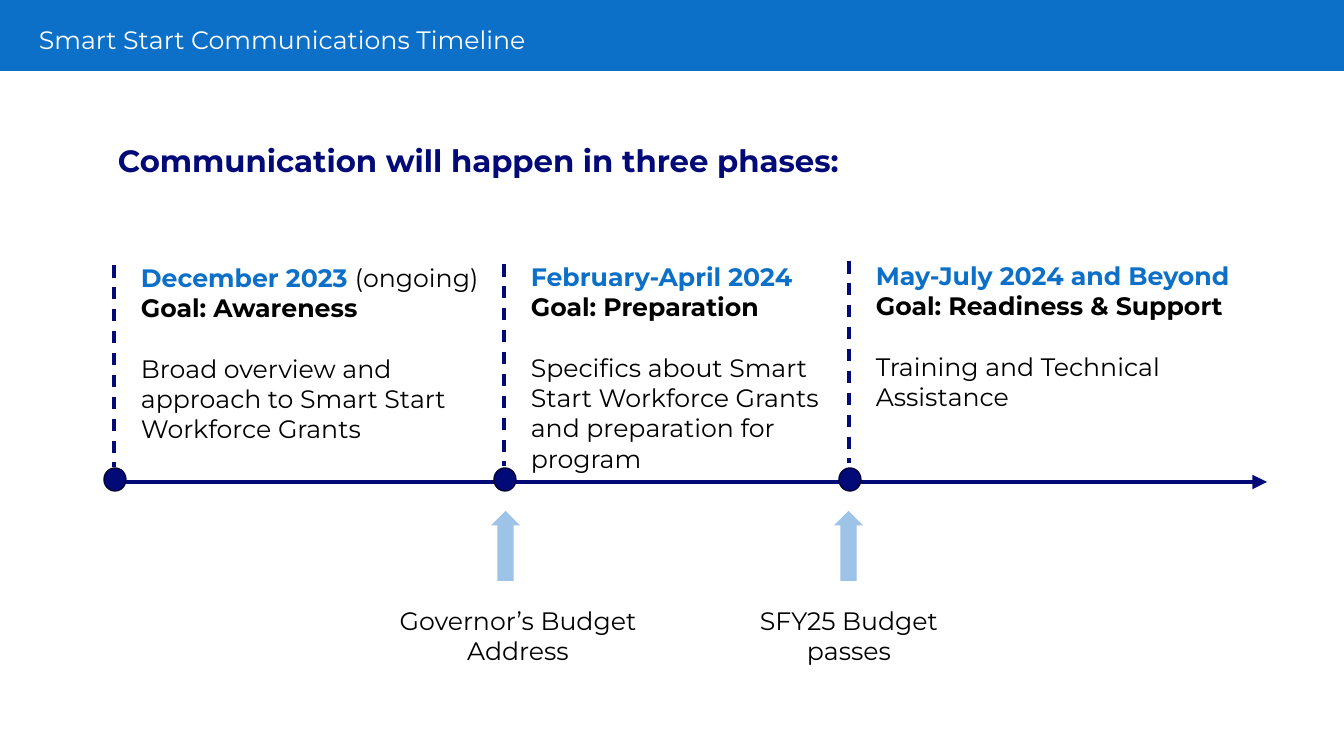
from pptx import Presentation
from pptx.dml.color import RGBColor
from pptx.enum.dml import MSO_LINE
from pptx.enum.shapes import MSO_CONNECTOR, MSO_SHAPE
from pptx.enum.text import MSO_ANCHOR, PP_ALIGN
from pptx.oxml.ns import qn
from pptx.util import Pt
from lxml import etree

RECTANGLE, OVAL, UP_ARROW = MSO_SHAPE.RECTANGLE, MSO_SHAPE.OVAL, MSO_SHAPE.UP_ARROW
STRAIGHT, DASH = MSO_CONNECTOR.STRAIGHT, MSO_LINE.DASH
MIDDLE, TOP = MSO_ANCHOR.MIDDLE, MSO_ANCHOR.TOP
LEFT, CENTER = PP_ALIGN.LEFT, PP_ALIGN.CENTER

FONT = "Montserrat"
COLORS = {
    "blue": "0C70C8",
    "navy": "020A78",
    "outline": "010435",
    "sky": "9DC3E6",
    "black": "000000",
    "white": "FFFFFF",
}
AXIS_Y = 482

PHASES = [
    ((114, 261, 377, 194), 4, "December 2023 ", "(ongoing)", "Goal: Awareness",
     "Broad overview and approach to Smart Start Workforce Grants"),
    ((504, 260, 356, 224), 4, "February-April 2024", "", "Goal: Preparation",
     "Specifics about Smart Start Workforce Grants and preparation for program"),
    ((849, 259, 401, 163), 2, "May-July 2024 and Beyond", "", "Goal: Readiness & Support",
     "Training and Technical Assistance"),
]
EVENTS = [
    ((367, 511, 302, 191), 505, ["Governor’s Budget Address"]),
    ((698, 511, 302, 161), 848, ["SFY25 Budget", "passes"]),
]


def px(length):
    return round(length * 914400 / 100.8)


def rgb(name):
    return RGBColor.from_string(COLORS[name])


def add_block(page, kind, box, fill, line=None):
    shape = page.shapes.add_shape(kind, *map(px, box))
    shape.shadow.inherit = False
    shape.fill.solid()
    shape.fill.fore_color.rgb = rgb(fill)
    if line:
        shape.line.color.rgb = rgb(line)
        shape.line.width = Pt(1)
    else:
        shape.line.fill.background()
    return shape


def add_line(page, start, end, width):
    line = page.shapes.add_connector(STRAIGHT, *map(px, start + end))
    line.line.color.rgb = rgb("navy")
    line.line.width = Pt(width)
    etree.SubElement(line._element.spPr, qn("a:effectLst"))
    return line


def add_text(page, box, paragraphs, size=18, align=LEFT, anchor=TOP, spacing=None):
    frame = page.shapes.add_textbox(*map(px, box)).text_frame
    frame.word_wrap = True
    frame.vertical_anchor = anchor
    for index, spans in enumerate(paragraphs):
        para = frame.add_paragraph() if index else frame.paragraphs[0]
        para.alignment = align
        if spacing:
            para.line_spacing = spacing
        for text, color, bold in spans:
            span = para.add_run()
            span.text = text
            span.font.name = FONT
            span.font.size = Pt(size)
            span.font.bold = bold
            span.font.color.rgb = rgb(color)
    return frame


def add_header(page, box):
    left, top, width, height = box
    add_block(page, RECTANGLE, box, "blue")
    add_text(page, (left + 29, top + 22, 761, 38),
             [[("Smart Start Communications Timeline", "white", False)]],
             anchor=MIDDLE, spacing=0.9)


def add_heading(page, box):
    add_text(page, box, [[("Communication will happen in three phases:", "navy", True)]],
             size=22, spacing=1.1)


def add_axis(page, box):
    left, top, width, _ = box
    axis = add_line(page, (left, top), (left + width, top), 3.5)
    etree.SubElement(axis.line._get_or_add_ln(), qn("a:tailEnd"), type="triangle")


def add_phase(page, box, dash_offset, date, note, goal, detail):
    left, top, width, height = box
    dash_top = top + dash_offset
    marker = add_line(page, (left, dash_top), (left, dash_top + 202), 2.25)
    marker.line.dash_style = DASH
    add_block(page, OVAL, (left - 10, AXIS_Y - 14, 22, 23), "navy", "outline")
    dates = [(date, "blue", True)]
    if note:
        dates.append((note, "black", False))
    frame = add_text(page, (left + 17, top - 4, width - 17, height),
                     [dates, [(goal, "black", True)], [(detail, "black", False)]])
    frame.paragraphs[-1].space_before = Pt(22)


def add_event(page, box, arrow_x, lines):
    left, top, width, height = box
    arrow = add_block(page, UP_ARROW, (arrow_x - 14, top, 29, 70), "sky")
    arrow.adjustments[0] = 0.56
    arrow.adjustments[1] = 0.5
    add_text(page, (left, top + 89, width, height - 89),
             [[(line, "black", False)] for line in lines], align=CENTER)


def main():
    deck = Presentation()
    deck.slide_width, deck.slide_height = px(1344), px(756)
    page = deck.slides.add_slide(deck.slide_layouts[6])
    add_header(page, (0, 0, 1344, 71))
    add_heading(page, (108, 133, 1178, 48))
    add_axis(page, (107, AXIS_Y, 1160, 0))
    for phase in PHASES:
        add_phase(page, *phase)
    for event in EVENTS:
        add_event(page, *event)
    deck.save("out.pptx")


if __name__ == "__main__":
    main()
